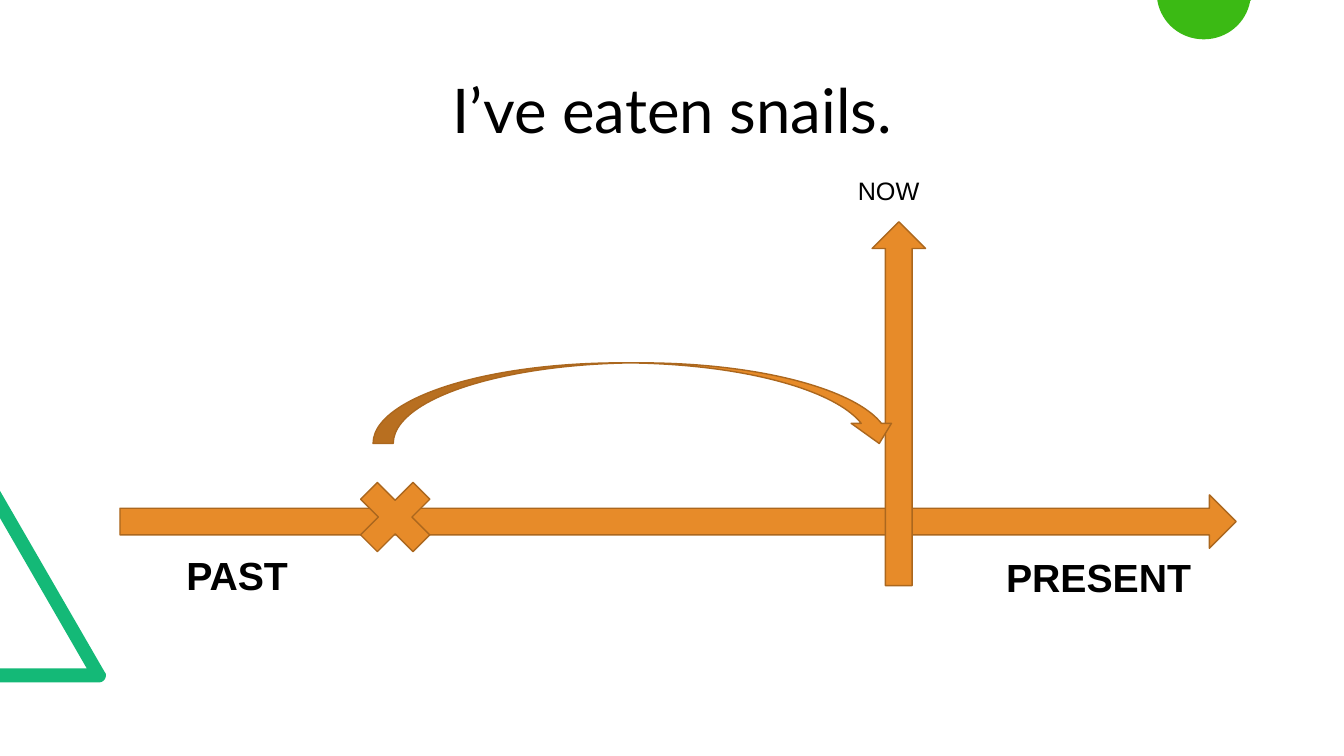
from pptx import Presentation
from pptx.dml.color import RGBColor
from pptx.enum.shapes import MSO_SHAPE
from pptx.enum.text import MSO_ANCHOR, MSO_AUTO_SIZE, PP_ALIGN
from pptx.util import Inches, Pt

ORANGE, BROWN, BLACK = "E78B29", "AB671E", "000000"
CURVE_STEPS = 16

TITLE = ("I’ve eaten snails.", (0.92, 0.4, 11.5, 1.45))
LABELS = [
    ("PAST", (1.75, 5.42, 1.4, 0.57), 28, True),
    ("PRESENT", (9.88, 5.44, 2.06, 0.57), 28, True),
    ("NOW", (8.41, 1.69, 1, 0.4), 18, False),
]
TIMELINE = [
    (MSO_SHAPE.RIGHT_ARROW, (1.19, 4.91, 11.07, 0.53)),
    (MSO_SHAPE.UP_ARROW, (8.65, 2.2, 0.53, 3.61)),
    (MSO_SHAPE.MATH_MULTIPLY, (3.42, 4.63, 1, 1)),
    (MSO_SHAPE.CURVED_DOWN_ARROW, (3.7, 3.6, 5.22, 0.8)),
]
DECORATIONS = [
    ("14B977", [(0, 6.77), (0, 6.63), (0.86, 6.63), (0, 5.14), (0, 4.87), (1.04, 6.67),
                (1.05, 6.68, 1.05, 6.69, 1.05, 6.7),
                (1.05, 6.74, 1.02, 6.77, 0.98, 6.77)]),
    ("3BBA14", [(11.48, 0), (12.41, 0), (12.4, 0.01),
                (12.36, 0.23, 12.17, 0.39, 11.94, 0.39),
                (11.71, 0.39, 11.52, 0.23, 11.48, 0.01)]),
]


def color(value):
    return RGBColor.from_string(value)


def paint(shape, fill, line=None):
    shape.shadow.inherit = False
    shape.fill.solid()
    shape.fill.fore_color.rgb = color(fill)
    if line:
        shape.line.color.rgb = color(line)
        shape.line.width = Pt(1)
    else:
        shape.line.fill.background()


def add_text(slide, text, box, size=18, font="Arial", bold=False, align=PP_ALIGN.LEFT,
             anchor=MSO_ANCHOR.TOP, spacing=1.0, grow=True):
    frame = slide.shapes.add_textbox(*map(Inches, box)).text_frame
    frame.word_wrap = True
    frame.auto_size = MSO_AUTO_SIZE.SHAPE_TO_FIT_TEXT if grow else MSO_AUTO_SIZE.NONE
    frame.vertical_anchor = anchor
    paragraph = frame.paragraphs[0]
    paragraph.alignment = align
    paragraph.line_spacing = spacing
    run = paragraph.add_run()
    run.text = text
    run.font.size = Pt(size)
    run.font.name = font
    run.font.bold = bold
    run.font.color.rgb = color(BLACK)


def flatten(outline):
    points = []
    for step in outline:
        if len(step) == 2:
            points.append(step)
            continue
        corners = [points[-1], step[:2], step[2:4], step[4:]]
        for i in range(1, CURVE_STEPS + 1):
            t = i / CURVE_STEPS
            weights = ((1 - t) ** 3, 3 * t * (1 - t) ** 2, 3 * t * t * (1 - t), t ** 3)
            points.append(tuple(sum(w * c[axis] for w, c in zip(weights, corners))
                                for axis in (0, 1)))
    return [(Inches(x), Inches(y)) for x, y in points]


def main():
    deck = Presentation()
    deck.slide_width, deck.slide_height = Inches(13.33), Inches(7.5)
    slide = deck.slides.add_slide(deck.slide_layouts[6])

    for fill, outline in DECORATIONS:
        start, *rest = flatten(outline)
        builder = slide.shapes.build_freeform(*start)
        builder.add_line_segments(rest, close=True)
        paint(builder.convert_to_shape(), fill)

    sentence, box = TITLE
    add_text(slide, sentence, box, size=44, font="Lato", align=PP_ALIGN.CENTER,
             anchor=MSO_ANCHOR.MIDDLE, spacing=0.9, grow=False)
    for preset, box in TIMELINE:
        paint(slide.shapes.add_shape(preset, *map(Inches, box)), ORANGE, BROWN)
    for word, box, size, bold in LABELS:
        add_text(slide, word, box, size=size, bold=bold)

    deck.save("out.pptx")


if __name__ == "__main__":
    main()
